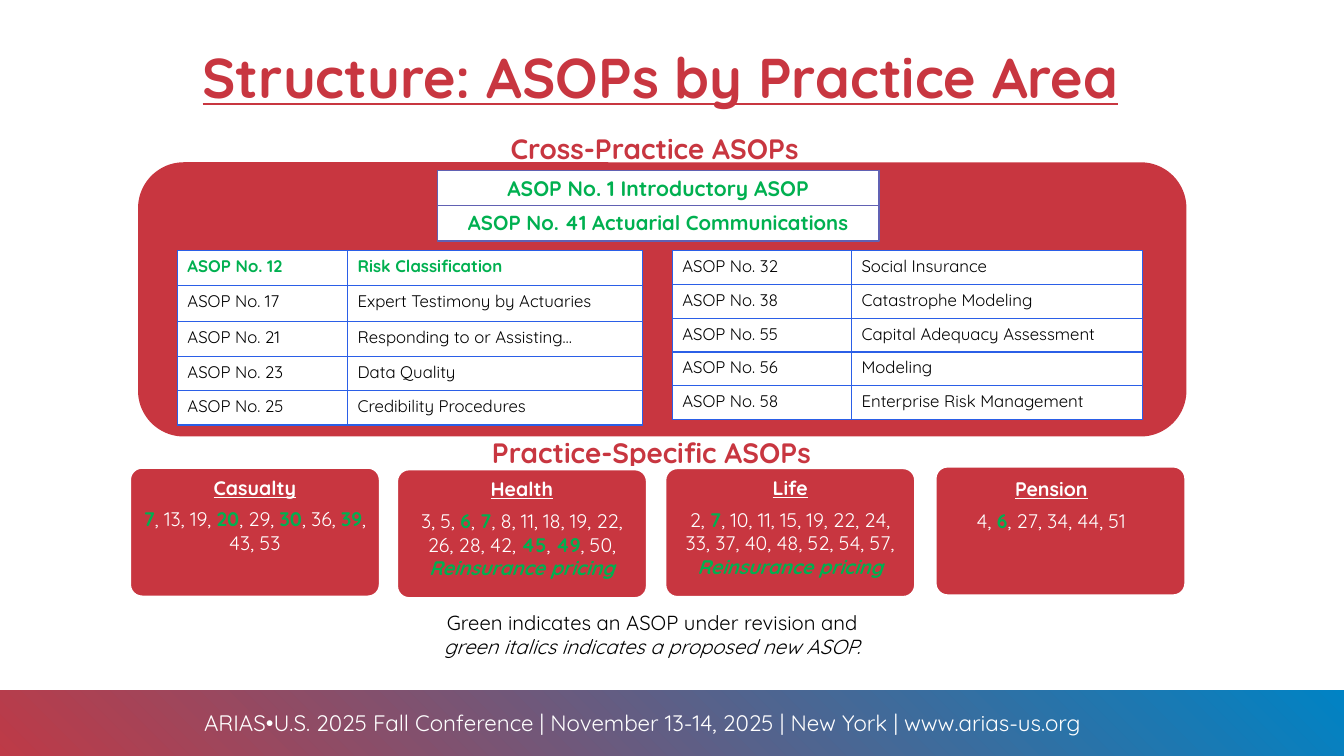
from lxml import etree
from pptx import Presentation
from pptx import util as u
from pptx.dml.color import RGBColor
from pptx.enum import shapes, text
from pptx.oxml import ns

RED, BLUE, GREEN, WHITE, BLACK = "C83640", "0083C4", "00B050", "FFFFFF", "000000"
GRID, VIOLET = "2B5FE7", "6161B3"
CENTER, LEFT = text.PP_ALIGN.CENTER, text.PP_ALIGN.LEFT
TOP, MIDDLE = text.MSO_ANCHOR.TOP, text.MSO_ANCHOR.MIDDLE
RECT, ROUNDED = shapes.MSO_SHAPE.RECTANGLE, shapes.MSO_SHAPE.ROUNDED_RECTANGLE


def rgb(code):
    """Turn a hex string into a colour."""
    return RGBColor.from_string(code)


def put(target, values):
    """Set each attribute named in a dict of values."""
    for key, value in values.items():
        setattr(target, key, value)


class Board:
    """Holds the style and the current slide, with a method per element."""

    font = "Quicksand"

    def __init__(self, deck):
        """Add a title-only slide to the deck."""
        self.slide = deck.slides.add_slide(deck.slide_layouts[5])

    def run(self, paragraph, words, size, color, **style):
        """Append one formatted run."""
        piece = paragraph.add_run()
        piece.text = words
        put(piece.font, {"name": self.font, "size": u.Pt(size), **style})
        piece.font.color.rgb = rgb(color)

    def place(self, shape, box):
        """Move a shape to a box given in centimetres."""
        put(shape, dict(zip(("left", "top", "width", "height"), map(u.Cm, box))))

    def title(self, words, box):
        """Move and format the title placeholder."""
        heading = self.slide.shapes.title
        self.place(heading, box)
        put(heading.text_frame, {"vertical_anchor": TOP, "word_wrap": True})
        paragraph = heading.text_frame.paragraphs[0]
        paragraph.alignment = LEFT
        self.run(paragraph, words, 40, RED, bold=True, underline=True)

    def shape(self, kind, box, fill, line=None, weight=1, corner=None):
        """Add a filled preset shape."""
        block = self.slide.shapes.add_shape(kind, *map(u.Cm, box))
        block.shadow.inherit = False
        block.fill.solid()
        block.fill.fore_color.rgb = rgb(fill)
        if line:
            block.line.color.rgb = rgb(line)
            block.line.width = u.Pt(weight)
        else:
            block.line.fill.background()
        if corner:
            block.adjustments[0] = corner
        put(block.text_frame, {"vertical_anchor": TOP, "word_wrap": True})
        return block

    def textbox(self, box, anchor=TOP):
        """Add an empty wrapping text box and return its frame."""
        frame = self.slide.shapes.add_textbox(*map(u.Cm, box)).text_frame
        put(frame, {"word_wrap": True, "vertical_anchor": anchor})
        return frame

    def label(self, frame, words, size, color, **style):
        """Write one centred line into a frame."""
        frame.paragraphs[0].alignment = CENTER
        self.run(frame.paragraphs[0], words, size, color, **style)

    def practice(self, frame, area, numbers):
        """Write a practice area and its numbers, with starred parts in green."""
        self.label(frame, area, 14, WHITE, bold=True, underline=True)
        frame.paragraphs[0].space_after = u.Pt(6)
        listing = frame.add_paragraph()
        listing.alignment = CENTER
        for index, part in enumerate(numbers.split("*")):
            revised = index % 2 == 1
            if part:
                self.run(listing, part, 14, GREEN if revised else WHITE, bold=revised,
                         italic=revised and not part.isdigit())

    def table(self, corner, widths, heights, rows, border, size, revised=(), **layout):
        """Add a bordered white table whose revised rows are bold green."""
        box = (*corner, sum(widths), sum(heights))
        grid = self.slide.shapes.add_table(len(rows), len(widths), *map(u.Cm, box)).table
        put(grid, {"first_row": False, "horz_banding": False})
        for column, width in zip(grid.columns, widths):
            column.width = u.Cm(width)
        for r, (row, height) in enumerate(zip(rows, heights)):
            grid.rows[r].height = u.Cm(height)
            for c, words in enumerate(row):
                cell = grid.cell(r, c)
                self.borders(cell, border)
                cell.fill.solid()
                cell.fill.fore_color.rgb = rgb(WHITE)
                cell.vertical_anchor = layout.get("anchor", TOP)
                paragraph = cell.text_frame.paragraphs[0]
                paragraph.alignment = layout.get("align", LEFT)
                self.run(paragraph, words, size, GREEN if r in revised else BLACK,
                         bold=r in revised)

    def borders(self, cell, color):
        """Draw a thin line on all four sides of a cell."""
        properties = cell._tc.get_or_add_tcPr()
        for side in ("a:lnL", "a:lnR", "a:lnT", "a:lnB"):
            line = etree.SubElement(properties, ns.qn(side), w=str(u.Pt(1)))
            fill = etree.SubElement(line, ns.qn("a:solidFill"))
            etree.SubElement(fill, ns.qn("a:srgbClr"), val=color)

    def footer(self, words):
        """Add the gradient band and its centred line."""
        band = self.shape(RECT, (-0.08, 17.4, 34.04, 3.53), RED)
        band.fill.gradient()
        band.fill.gradient_angle = 45
        for stop, color, position in zip(band.fill.gradient_stops, (RED, BLUE), (0, 1)):
            stop.color.rgb = rgb(color)
            stop.position = position
        self.label(self.textbox((1.55, 17.73, 29.29, 0.97), MIDDLE), words, 16, WHITE)


def main():
    """Build the slide and save it."""
    deck = Presentation()
    put(deck, {"slide_width": u.Cm(33.87), "slide_height": u.Cm(19.05)})
    board = Board(deck)
    board.footer("ARIAS•U.S. 2025 Fall Conference | November 13-14, 2025 | "
                 "New York | www.arias-us.org")
    board.title("Structure: ASOPs by Practice Area", (4.85, 0.94, 23.7, 2.49))

    board.shape(ROUNDED, (3.48, 4.09, 26.42, 6.91), RED, corner=0.167)
    for heading, box in (("Cross-Practice ASOPs", (11, 3.18, 11, 1.12)),
                         ("Practice-Specific ASOPs", (10.72, 10.85, 11.4, 1.12))):
        board.label(board.textbox(box), heading, 20, RED, bold=True)

    communications = board.shape(RECT, (11.02, 5.18, 11.13, 0.89), WHITE, VIOLET)
    board.label(communications.text_frame, "ASOP No. 41 Actuarial Communications",
                14.5, GREEN, bold=True)
    board.table((11.02, 4.29), [11.13], [0.89], [["ASOP No. 1 Introductory ASOP"]],
                VIOLET, 15, revised=[0], anchor=MIDDLE, align=CENTER)
    board.table((4.47, 6.32), [4.29, 7.44], [0.88, 0.91, 0.88, 0.86, 0.86], [
        ["ASOP No. 12", "Risk Classification"],
        ["ASOP No. 17", "Expert Testimony by Actuaries"],
        ["ASOP No. 21", "Responding to or Assisting…"],
        ["ASOP No. 23", "Data Quality"],
        ["ASOP No. 25", "Credibility Procedures"],
    ], GRID, 12, revised=[0])
    board.table((16.94, 6.32), [4.52, 7.34], [0.85] * 5, [
        ["ASOP No. 32", "Social Insurance"],
        ["ASOP No. 38", "Catastrophe Modeling"],
        ["ASOP No. 55", "Capital Adequacy Assessment"],
        ["ASOP No. 56", "Modeling"],
        ["ASOP No. 58", "Enterprise Risk Management"],
    ], GRID, 12)

    practices = [
        (3.25, 11.76, "Casualty", "*7*, 13, 19, *20*, 29, *30*, 36, *39*, 43, 53"),
        (9.98, 11.8, "Health", "3, 5, *6*, *7*, 8, 11, 18, 19, 22, 26, 28, 42, "
                               "*45*, *49*, 50, *Reinsurance pricing*"),
        (16.74, 11.77, "Life", "2, *7*, 10, 11, 15, 19, 22, 24, 33, 37, 40, 48, "
                               "52, 54, 57, *Reinsurance pricing*"),
        (23.55, 11.73, "Pension", "4, *6*, 27, 34, 44, 51"),
    ]
    for left, top, area, numbers in practices:
        card = board.shape(ROUNDED, (left, top, 6.35, 3.3), RED, WHITE, 3, 0.1)
        frame = card.text_frame
        if area == "Pension":
            frame = board.textbox((24.26, 11.89, 4.47, 3.2))
        board.practice(frame, area, numbers)

    legend = board.textbox((10.34, 15.24, 12.19, 1.5))
    board.label(legend, "Green indicates an ASOP under revision and", 14.5, BLACK)
    legend.paragraphs[0].add_line_break()
    board.run(legend.paragraphs[0], "green italics indicates a proposed new ASOP.",
              14.5, BLACK, italic=True)
    deck.save("out.pptx")


if __name__ == "__main__":
    main()
